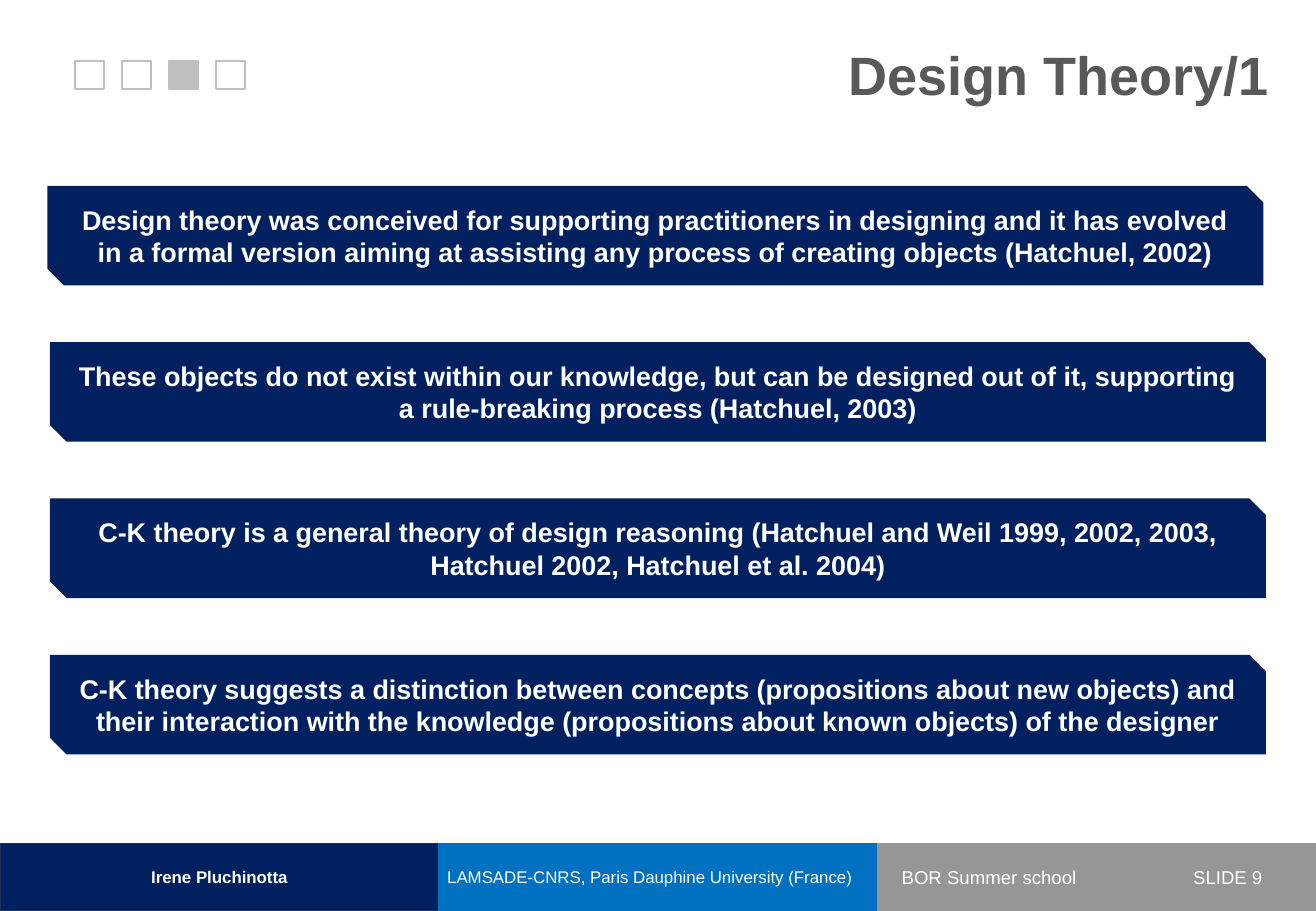
from dataclasses import dataclass
from pptx import Presentation, util as u
from pptx.dml.color import RGBColor
from pptx.enum import shapes, text

WIDE, HIGH = u.Inches(10.83), u.Inches(7.5)
MID, LEFT, RIGHT = text.PP_ALIGN.CENTER, text.PP_ALIGN.LEFT, text.PP_ALIGN.RIGHT
KIND = shapes.MSO_SHAPE


@dataclass(frozen=True)
class Theme:
    font: str = "Arial"
    navy: str = "002060"
    edge: str = "1A3260"
    blue: str = "0070C0"
    gray: str = "969696"
    pale: str = "BFBFBF"
    dark: str = "595959"
    white: str = "FFFFFF"
    title: int = 32
    body: int = 16
    foot: int = 10
    note: int = 11


LOOK = Theme()

CLAIMS = [
    "Design theory was conceived for supporting practitioners in designing and it has "
    "evolved in a formal version aiming at assisting any process of creating objects "
    "(Hatchuel, 2002)",
    "These objects do not exist within our knowledge, but can be designed out of it, "
    "supporting a rule-breaking process (Hatchuel, 2003)",
    "C-K theory is a general theory of design reasoning (Hatchuel and Weil 1999, 2002, "
    "2003,\vHatchuel 2002, Hatchuel et al. 2004)",
    "C-K theory suggests a distinction between concepts (propositions about new objects) "
    "and their interaction with the knowledge (propositions about known objects) of the "
    "designer",
]


def place(left, top, width, height):
    """Turn percentages of the slide into lengths."""
    return (int(WIDE * left / 100), int(HIGH * top / 100),
            int(WIDE * width / 100), int(HIGH * height / 100))


def write(shape, words, size, color=LOOK.white, bold=False, align=MID, pad=(0.1, 0.1)):
    """Fill a shape with one paragraph; pad is the left and right inset in inches."""
    frame = shape.text_frame
    frame.word_wrap = True
    frame.vertical_anchor = text.MSO_ANCHOR.MIDDLE
    frame.margin_left, frame.margin_right = map(u.Inches, pad)
    frame.text = words
    para = frame.paragraphs[0]
    para.alignment = align
    font = para.font
    font.name, font.size, font.bold = LOOK.font, u.Pt(size), bold
    font.color.rgb = RGBColor.from_string(color)
    return para


def block(slide, kind, area, fill=None, line=None):
    shape = slide.shapes.add_shape(kind, *place(*area))
    shape.shadow.inherit = False
    if fill:
        shape.fill.solid()
        shape.fill.fore_color.rgb = RGBColor.from_string(fill)
    else:
        shape.fill.background()
    if line:
        shape.line.color.rgb = RGBColor.from_string(line)
        shape.line.width = u.Pt(1)
    else:
        shape.line.fill.background()
    return shape


def label(slide, area, words, size, **style):
    return write(slide.shapes.add_textbox(*place(*area)), words, size, **style)


def footer(slide):
    third, top, tall = 100 / 3, 92.6, 7.4
    cells = [
        (LOOK.navy, LOOK.edge, "Irene Pluchinotta", LOOK.foot, dict(bold=True)),
        (LOOK.blue, LOOK.blue, "LAMSADE-CNRS, Paris Dauphine University (France)",
         LOOK.foot, dict(pad=(0, 0.14))),
        (LOOK.gray, LOOK.gray, "BOR Summer school", LOOK.note,
         dict(align=LEFT, pad=(0.2, 0.1))),
    ]
    for i, (fill, line, words, size, style) in enumerate(cells):
        cell = block(slide, KIND.RECTANGLE, (i * third, top, third, tall), fill, line)
        write(cell, words, size, **style)
    label(slide, (85, top, 15, tall), "SLIDE 9", LOOK.note,
          align=RIGHT, pad=(0.1, 0.44))


def tracker(slide, count, active):
    """Draw the row of progress squares, with the active one filled."""
    for i in range(count):
        block(slide, KIND.RECTANGLE, (5.72 + i * 3.57, 6.67, 2.2, 3.07),
              LOOK.pale if i == active else None, LOOK.pale)


def banners(slide):
    for i, claim in enumerate(CLAIMS):
        left = 3.8 if i else 3.6
        bar = block(slide, KIND.SNIP_2_DIAG_RECTANGLE,
                    (left, 20.4 + i * 17.16, 92.4, 10.93), LOOK.navy)
        write(bar, claim, LOOK.body, bold=True)


def main():
    deck = Presentation()
    deck.slide_width, deck.slide_height = WIDE, HIGH
    slide = deck.slides.add_slide(deck.slide_layouts[6])
    footer(slide)
    title = label(slide, (2.77, 4.27, 94.55, 8.67), "Design Theory/1", LOOK.title,
                  color=LOOK.dark, bold=True, align=RIGHT)
    title.line_spacing = 0.9
    tracker(slide, 4, 2)
    banners(slide)
    deck.save("out.pptx")


if __name__ == "__main__":
    main()
